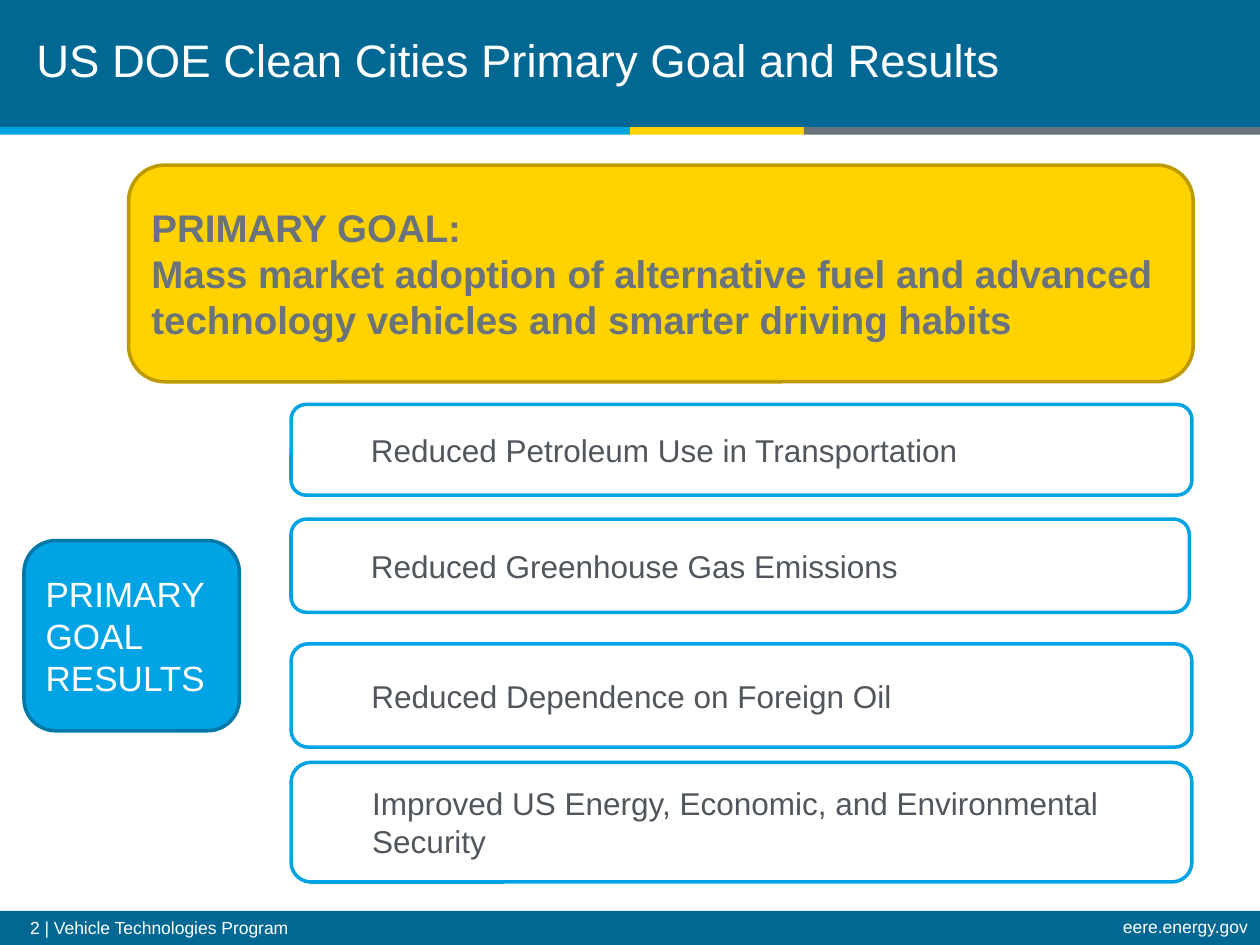
from pptx import Presentation
from pptx import util as u
from pptx.dml.color import RGBColor
from pptx.enum import shapes, text

W, H = 10, 7.5
NAVY, BLUE, YELLOW, GRAY, WHITE = "006892", "00A4E4", "FFD200", "6A737B", "FFFFFF"
BANDS = [(0, 1.01, NAVY), (7.23, 0.27, NAVY)]
STRIPES = [(5, BLUE), (1.38, YELLOW), (3.62, GRAY)]
TITLE = "US DOE Clean Cities Primary Goal and Results"
GOAL = ["PRIMARY GOAL:",
        "Mass market adoption of alternative fuel and advanced "
        "technology vehicles and smarter driving habits"]
RESULTS = [
    (3.21, 7.15, 0.72, "Reduced Petroleum Use in Transportation"),
    (4.12, 7.13, 0.74, "Reduced Greenhouse Gas Emissions"),
    (5.11, 7.15, 0.82, "Reduced Dependence on Foreign Oil"),
    (6.05, 7.15, 0.95, "Improved US Energy, Economic, and Environmental Security"),
]
RESULTS_LEFT = 2.31

prs = Presentation()
prs.slide_width, prs.slide_height = u.Inches(W), u.Inches(H)
s = prs.slides.add_slide(prs.slide_layouts[6])


def rgb(color):
    return RGBColor.from_string(color)


def write(sp, lines, size, color, bold=False, indent=0, align=text.PP_ALIGN.LEFT,
          anchor=text.MSO_ANCHOR.MIDDLE, spacing=None):
    tf = sp.text_frame
    tf.word_wrap = True
    tf.vertical_anchor = anchor
    tf.text = "\n".join(lines)
    for p in tf.paragraphs:
        p.alignment = align
        if spacing:
            p.line_spacing = spacing
        if indent:
            p.level = 1
            pPr = p._p.get_or_add_pPr()
            pPr.set("marL", str(u.Inches(indent)))
            pPr.set("indent", "0")
        p.font.name, p.font.size, p.font.bold = "Arial", u.Pt(size), bold
        p.font.color.rgb = rgb(color)


def box(at, fill, line=None):
    kind = shapes.MSO_SHAPE.ROUNDED_RECTANGLE if line else shapes.MSO_SHAPE.RECTANGLE
    sp = s.shapes.add_shape(kind, *map(u.Inches, at))
    sp.shadow.inherit = False
    sp.fill.solid()
    sp.fill.fore_color.rgb = rgb(fill)
    if line:
        sp.line.color.rgb = rgb(line)
        sp.line.width = u.Pt(2)
    else:
        sp.line.fill.background()
    return sp


def label(at, words, size, **style):
    write(s.shapes.add_textbox(*map(u.Inches, at)), [words], size, WHITE, **style)


for top, height, color in BANDS:
    box((0, top, W, height), color)
left = 0
for width, color in STRIPES:
    box((left, 1.01, width, 0.06), color)
    left += width

label((5.99, 7.24, 4.01, 0.26), "eere.energy.gov", 10, align=text.PP_ALIGN.RIGHT,
      anchor=text.MSO_ANCHOR.TOP, spacing=0.9)
label((0.14, 7.23, 7.97, 0.26), "2 | Vehicle Technologies Program", 10,
      anchor=text.MSO_ANCHOR.TOP)
label((0.19, 0, 9.52, 0.99), TITLE, 26, spacing=u.Pt(28))

write(box((1.02, 1.31, 8.45, 1.72), YELLOW, "BD9B00"), GOAL, 22, GRAY, bold=True)
for top, width, height, words in RESULTS:
    write(box((RESULTS_LEFT, top, width, height), WHITE, BLUE), [words], 18, "50565C",
          indent=0.5)
write(box((0.19, 4.29, 1.71, 1.51), BLUE, "0079A9"), ["PRIMARY GOAL RESULTS"], 20, WHITE)

prs.save("out.pptx")
